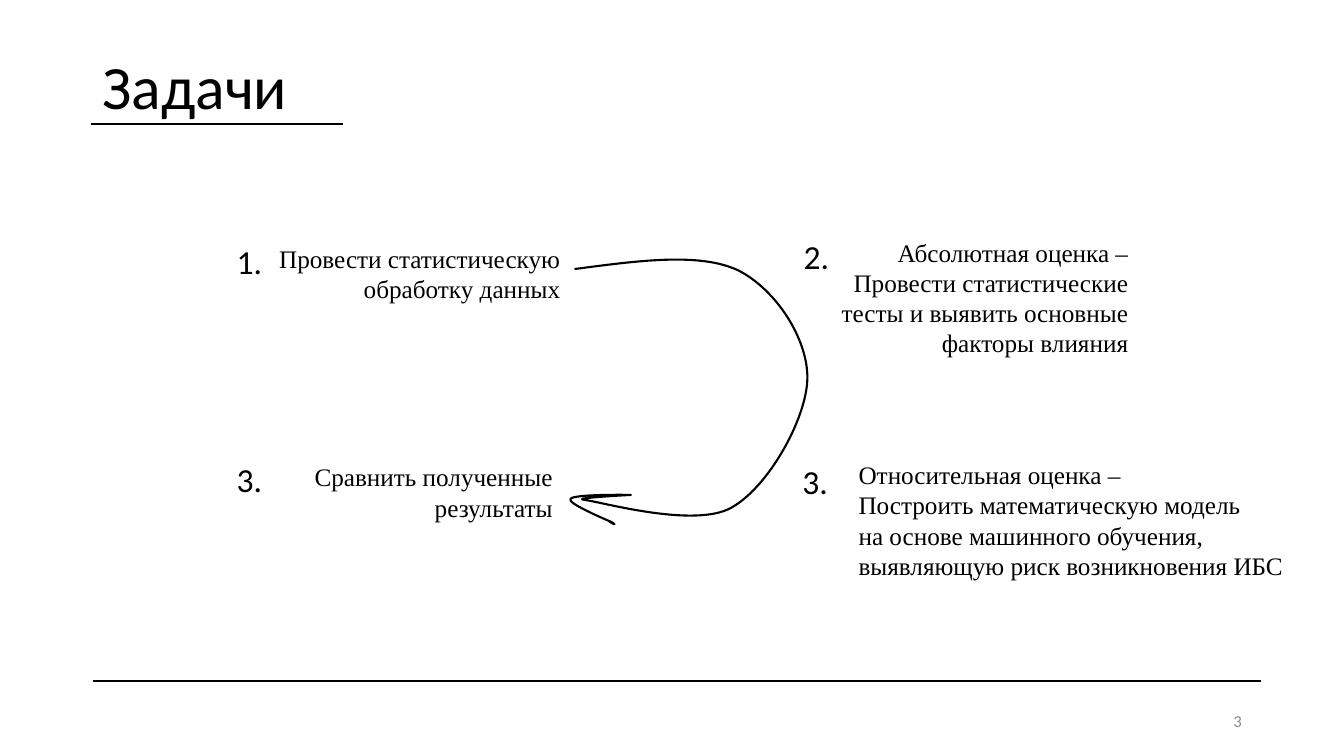
"""Builds the slide that lists the tasks of the study."""
import lxml.etree
import pptx
import pptx.dml.color
import pptx.enum.shapes
import pptx.enum.text
import pptx.oxml.ns
import pptx.util

Pt = pptx.util.Pt
qn = pptx.oxml.ns.qn
LEFT = pptx.enum.text.PP_ALIGN.LEFT
RIGHT = pptx.enum.text.PP_ALIGN.RIGHT
TOP = pptx.enum.text.MSO_ANCHOR.TOP
MIDDLE = pptx.enum.text.MSO_ANCHOR.MIDDLE
BLACK = "000000"

TASKS = [
    ("2.", (566.9, 164.9), (433.4, 165.8, 379.6, 116.6), RIGHT,
     ["Абсолютная оценка –", "Провести статистические",
      " тесты и выявить основные", " факторы влияния"]),
    ("1.", (162, 168.5), (190, 170.4, 217.3, 51), RIGHT,
     ["Провести статистическую", "обработку данных"]),
    ("3.", (566, 325.5), (606.2, 324.7, 321.2, 94.3), LEFT,
     ["Относительная оценка –", "Построить математическую модель",
      "на основе машинного обучения,", "выявляющую риск возникновения ИБС"]),
    ("3.", (162, 324), (211, 326.2, 190.8, 51), RIGHT,
     ["Сравнить полученные", "результаты"]),
]

ARROW_BOX = ((407.5, 185.8), (577.4, 375.1))
ARROW_START = (410.4, 192.2)
ARROW_CURVES = [
    ((454.3, 186.5), (499, 180), (527, 193)),
    ((554.4, 206.6), (577.4, 242.6), (576.7, 270.7)),
    ((576, 299.5), (548.6, 348.5), (522, 362.9)),
    ((495.4, 377.3), (429.8, 358.6), (417.6, 357.1)),
    ((406.1, 355.7), (452.9, 353.5), (450.7, 353.5)),
    ((449.3, 353.5), (409.7, 352.8), (407.5, 356.4)),
    ((404.6, 359.3), (432, 370.8), (437, 373)),
    ((441.4, 375.8), (437.8, 374.4), (434.9, 372.2)),
]


def color(value):
    """Return the colour for a hex string."""
    return pptx.dml.color.RGBColor.from_string(value)


def add_text(slide, box, lines, font, size, align=LEFT, anchor=TOP,
             fill=BLACK, spacing=1.0):
    """Add a text box with one paragraph per line."""
    s = slide.shapes.add_textbox(*map(Pt, box))
    tf = s.text_frame
    tf.word_wrap = True
    tf.vertical_anchor = anchor
    tf.text = "\n".join(lines)
    for p in tf.paragraphs:
        p.alignment = align
        p.line_spacing = spacing
        p.font.name = font
        p.font.size = Pt(size)
        p.font.color.rgb = color(fill)


def style_line(s):
    """Give a shape or connector the thin black stroke."""
    s.line.color.rgb = color(BLACK)
    s.line.width = Pt(1.5)


def add_rule(slide, x1, x2, y):
    """Add a horizontal rule."""
    s = slide.shapes.add_connector(
        pptx.enum.shapes.MSO_CONNECTOR.STRAIGHT, Pt(x1), Pt(y), Pt(x2), Pt(y))
    style_line(s)
    lxml.etree.SubElement(s._element.spPr, qn("a:effectLst"))


def add_segment(outline, tag, points, origin):
    """Append a drawing command with its points to an outline."""
    segment = lxml.etree.SubElement(outline, qn(tag))
    for x, y in points:
        lxml.etree.SubElement(segment, qn("a:pt"),
                              x=str(Pt(x - origin[0])),
                              y=str(Pt(y - origin[1])))


def add_curve(slide, box, start, curves):
    """Add an open outline made of cubic curves within a box."""
    origin, corner = box
    builder = slide.shapes.build_freeform(*map(Pt, origin))
    builder.add_line_segments([tuple(map(Pt, corner))], close=False)
    s = builder.convert_to_shape()
    s.fill.background()
    s.shadow.inherit = False
    style_line(s)
    outline = next(s._element.iter(qn("a:path")))
    for segment in list(outline):
        outline.remove(segment)
    add_segment(outline, "a:moveTo", [start], origin)
    for curve in curves:
        add_segment(outline, "a:cubicBezTo", curve, origin)


def add_task(slide, number, corner, box, align, lines):
    """Add a numbered task."""
    add_text(slide, box, lines, "Times New Roman", 18, align)
    add_text(slide, (*corner, 41, 36), [number], "Calibri", 24)


def main():
    """Build and save the slide."""
    prs = pptx.Presentation()
    prs.slide_width, prs.slide_height = Pt(960), Pt(540)
    slide = prs.slides.add_slide(prs.slide_layouts[6])
    add_rule(slide, 66.2, 900.7, 486.7)
    add_text(slide, (66.2, 11.5, 828, 104.4), ["Задачи"], "Calibri", 44,
             anchor=MIDDLE, spacing=0.9)
    add_rule(slide, 64.8, 244.8, 88.6)
    add_curve(slide, ARROW_BOX, ARROW_START, ARROW_CURVES)
    for task in TASKS:
        add_task(slide, *task)
    add_text(slide, (678.2, 500.4, 216, 28.8), ["3"], "Calibri", 12, RIGHT,
             MIDDLE, "8C8C8C")
    prs.save("out.pptx")


if __name__ == "__main__":
    main()
